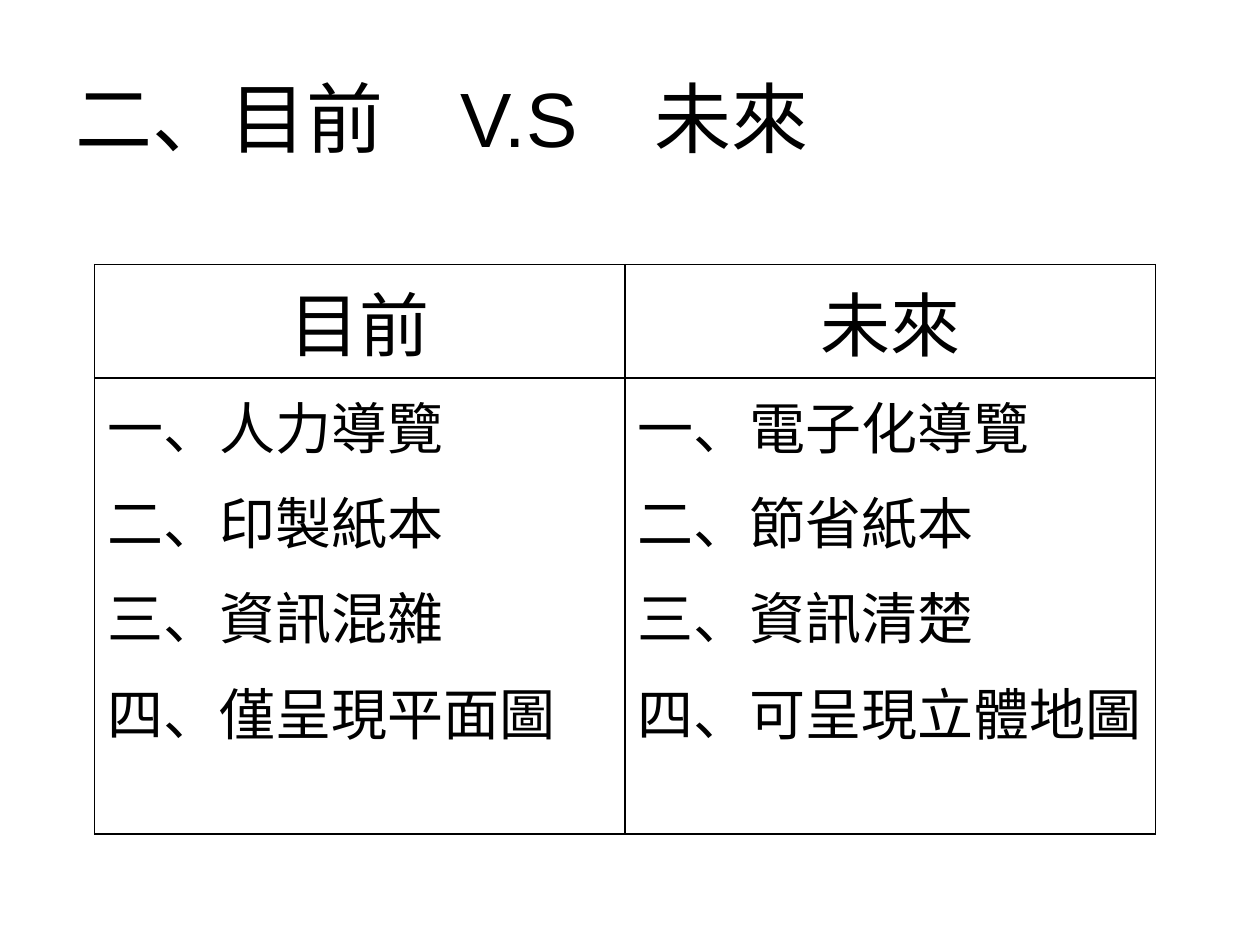
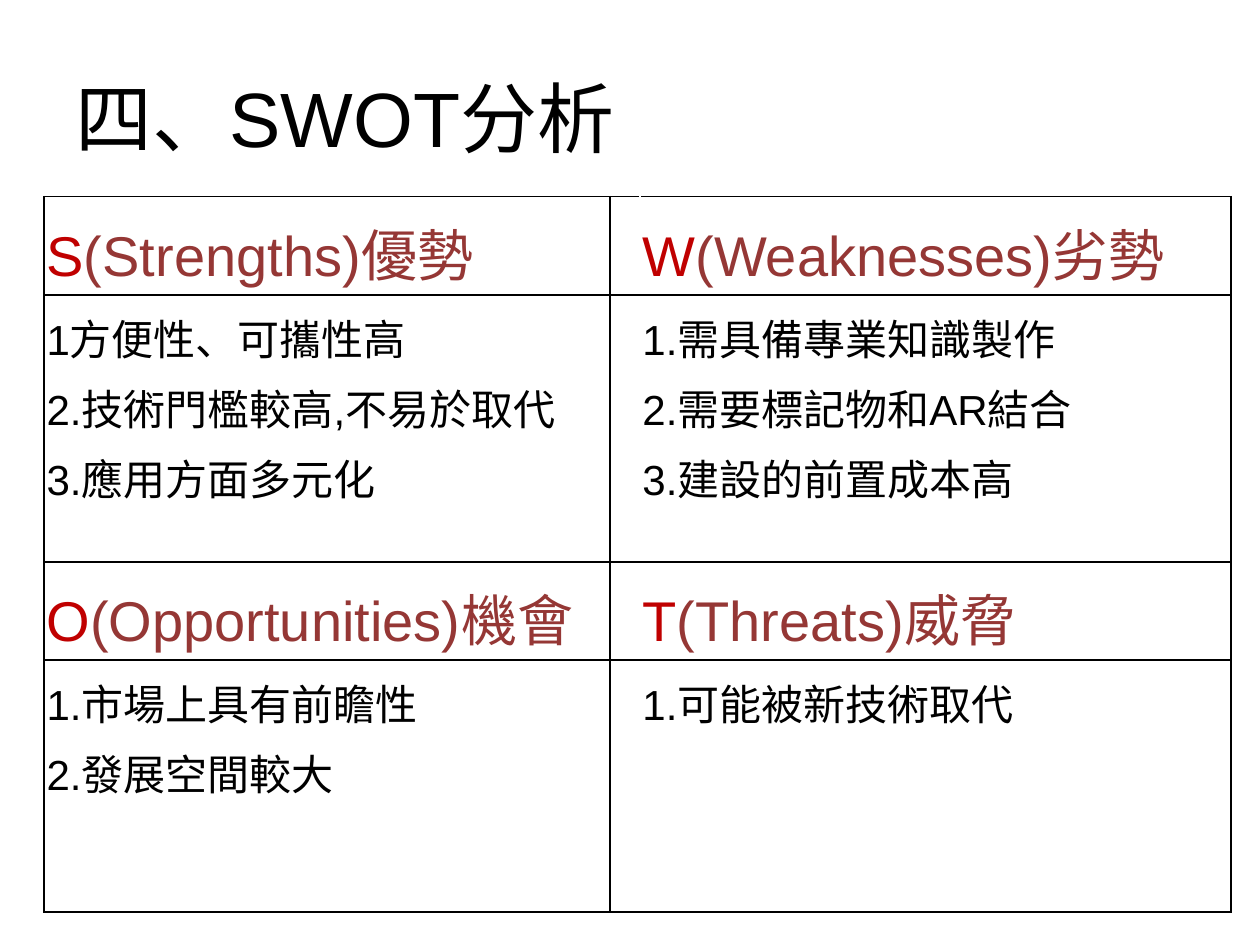
from lxml import etree
from pptx import Presentation
from pptx.dml.color import RGBColor
from pptx.enum.text import MSO_ANCHOR, PP_ALIGN
from pptx.oxml.ns import qn
from pptx.util import Inches, Pt

BLACK = RGBColor(0x00, 0x00, 0x00)
WHITE = RGBColor(0xFF, 0xFF, 0xFF)
RED = RGBColor(0xC0, 0x00, 0x00)
MAROON = RGBColor(0x95, 0x37, 0x35)
FONT = "Arial"

COMPARISON_TITLE = "二、目前\u3000V.S\u3000未來".replace("\u3000", "　")
COMPARISON = [
    ("目前", ["一、人力導覽", "二、印製紙本", "三、資訊混雜", "四、僅呈現平面圖"]),
    ("未來", ["一、電子化導覽", "二、節省紙本", "三、資訊清楚", "四、可呈現立體地圖"]),
]

SWOT_TITLE = "四、SWOT分析"
SWOT = [
    [
        ("S", "(Strengths)優勢",
         ["1方便性、可攜性高", "2.技術門檻較高,不易於取代", "3.應用方面多元化"]),
        ("W", "(Weaknesses)劣勢",
         ["1.需具備專業知識製作", "2.需要標記物和AR結合", "3.建設的前置成本高"]),
    ],
    [
        ("O", "(Opportunities)機會", ["1.市場上具有前瞻性", "2.發展空間較大"]),
        ("T", "(Threats)威脅", ["1.可能被新技術取代"]),
    ],
]

HEADER_FORMAT = {"alignment": PP_ALIGN.CENTER}
ITEM_FORMAT = {"space_after": Pt(8)}
SWOT_FORMAT = {"line_spacing": 1.15}


def write(frame, paragraphs, size, paragraph_format):
    """Each paragraph is a list of (text, colour) runs."""
    for index, runs in enumerate(paragraphs):
        paragraph = frame.paragraphs[0] if index == 0 else frame.add_paragraph()
        for name, value in paragraph_format.items():
            setattr(paragraph, name, value)
        for text, colour in runs:
            run = paragraph.add_run()
            run.text = text
            run.font.name = FONT
            run.font.size = Pt(size)
            run.font.color.rgb = colour


def plain(lines):
    return [[(line, BLACK)] for line in lines]


def add_titled_slide(deck, title):
    slide = deck.slides.add_slide(deck.slide_layouts[6])
    box = slide.shapes.add_textbox(Inches(0.5), Inches(0.3), Inches(9), Inches(1.25))
    box.text_frame.word_wrap = True
    box.text_frame.vertical_anchor = MSO_ANCHOR.MIDDLE
    write(box.text_frame, plain([title]), 44, {})
    return slide


def set_borders(cell, hidden_side=None):
    properties = cell._tc.get_or_add_tcPr()
    for position, side in enumerate(("lnL", "lnR", "lnT", "lnB")):
        line = etree.Element(qn(f"a:{side}"), w=str(Pt(1)))
        fill = etree.SubElement(line, qn("a:solidFill"))
        colour = WHITE if side == hidden_side else BLACK
        etree.SubElement(fill, qn("a:srgbClr"), val=str(colour))
        properties.insert(position, line)


def add_grid(slide, left, top, widths, heights):
    table = slide.shapes.add_table(
        len(heights), len(widths), Inches(left), Inches(top),
        Inches(sum(widths)), Inches(sum(heights))).table
    table.first_row = table.horz_banding = False
    for column, width in zip(table.columns, widths):
        column.width = Inches(width)
    for row, height in zip(table.rows, heights):
        row.height = Inches(height)
    for cell in table.iter_cells():
        cell.fill.background()
    return table


def build_comparison(deck):
    slide = add_titled_slide(deck, COMPARISON_TITLE)
    table = add_grid(slide, 0.75, 2.1, [4.21] * 2, [0.9, 3.62])
    for column, (heading, items) in enumerate(COMPARISON):
        write(table.cell(0, column).text_frame, plain([heading]), 40, HEADER_FORMAT)
        write(table.cell(1, column).text_frame, plain(items), 32, ITEM_FORMAT)
    for cell in table.iter_cells():
        set_borders(cell)


def build_swot(deck):
    slide = add_titled_slide(deck, SWOT_TITLE)
    table = add_grid(slide, 0.35, 1.56, [4.49, 0.19, 4.69], [0.78, 2.12, 0.78, 2])
    for band, quadrants in enumerate(SWOT):
        for side, (initial, name, points) in enumerate(quadrants):
            heading, body = (table.cell(2 * band + step, 2 * side) for step in (0, 1))
            for cell in (heading, body):
                for margin in ("left", "right", "top", "bottom"):
                    setattr(cell, f"margin_{margin}", Inches(0.02))
            write(heading.text_frame, [[(initial, RED), (name, MAROON)]], 32, SWOT_FORMAT)
            write(body.text_frame, plain(points), 24, SWOT_FORMAT)
    # The narrow middle column reads as the left padding of the right one.
    for row in table.rows:
        for cell, hidden_side in zip(row.cells, (None, "lnR", "lnL")):
            set_borders(cell, hidden_side)


def main():
    deck = Presentation()
    deck.slide_width, deck.slide_height = Inches(10), Inches(7.5)
    build_comparison(deck)
    build_swot(deck)
    deck.save("out.pptx")


if __name__ == "__main__":
    main()
